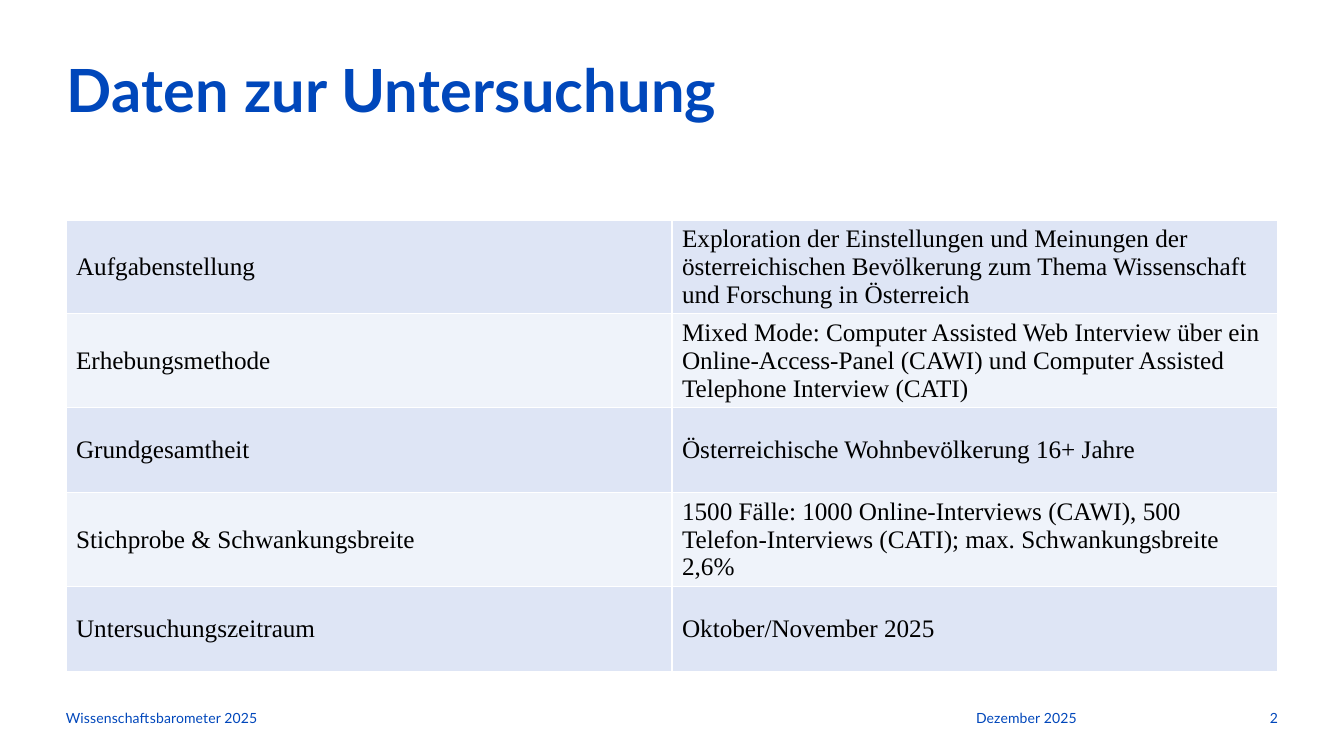
from lxml.etree import SubElement
from pptx import Presentation
from pptx.dml.color import RGBColor
from pptx.enum.text import MSO_ANCHOR as Anchor, MSO_AUTO_SIZE as AutoSize, PP_ALIGN as Align
from pptx.oxml import parse_xml
from pptx.oxml.ns import nsdecls, qn
from pptx.util import Emu, Pt

PAGE_WIDTH, PAGE_HEIGHT = 1344, 756
SCALE = 12192000 / PAGE_WIDTH
BLUE = RGBColor(0x00, 0x47, 0xBB)
BLACK = RGBColor(0x00, 0x00, 0x00)
WHITE = RGBColor(0xFF, 0xFF, 0xFF)
BANDS = RGBColor(0xDE, 0xE5, 0xF5), RGBColor(0xEF, 0xF3, 0xFA)

TITLE_FORMAT = {"name": "Lato", "size": Pt(42.5), "bold": True}
FOOTER_FORMAT = {"name": "Lato", "size": Pt(10)}
CELL_FORMAT = {"name": "Times New Roman", "size": Pt(18)}
FRAME_FORMAT = {
    "margin_left": 0, "margin_top": 0, "margin_right": 0, "margin_bottom": 0,
    "word_wrap": True, "auto_size": AutoSize.NONE, "vertical_anchor": Anchor.TOP,
}

STUDY_ROWS = [
    ("Aufgabenstellung",
     "Exploration der Einstellungen und Meinungen der österreichischen Bevölkerung "
     "zum Thema Wissenschaft und Forschung in Österreich"),
    ("Erhebungsmethode",
     "Mixed Mode: Computer Assisted Web Interview über ein Online-Access-Panel (CAWI) "
     "und Computer Assisted Telephone Interview (CATI)"),
    ("Grundgesamtheit", "Österreichische Wohnbevölkerung 16+ Jahre"),
    ("Stichprobe & Schwankungsbreite",
     "1500 Fälle: 1000 Online-Interviews (CAWI), 500 Telefon-Interviews (CATI); "
     "max. Schwankungsbreite 2,6%"),
    ("Untersuchungszeitraum", "Oktober/November 2025"),
]


def px(length):
    return Emu(round(length * SCALE))


def apply(target, values):
    for name, value in values.items():
        setattr(target, name, value)


def write(frame, text, font_format, color, align=Align.LEFT, spacing=0):
    para = frame.paragraphs[0]
    para.alignment = align
    span = para.add_run()
    span.text = text
    apply(span.font, font_format)
    span.font.color.rgb = color
    if spacing:
        span.font._element.set("spc", str(spacing))
    return para


def add_title(page, box, text):
    title = page.shapes.title
    apply(title, dict(zip(("left", "top", "width", "height"), map(px, box))))
    apply(title.text_frame, FRAME_FORMAT)
    para = write(title.text_frame, text, TITLE_FORMAT, BLUE, spacing=20)
    para.line_spacing = 0.93


def add_footer(page, box):
    left, top, width, height = box
    parts = [
        (0, 454, "Wissenschaftsbarometer 2025", Align.LEFT),
        (910, 158, "Dezember 2025", Align.LEFT),
        (width - 80, 80, "2", Align.RIGHT),
    ]
    for offset, part_width, text, align in parts:
        part = page.shapes.add_textbox(px(left + offset), px(top), px(part_width), px(height))
        apply(part.text_frame, FRAME_FORMAT)
        write(part.text_frame, text, FOOTER_FORMAT, BLUE, align, 10)


def add_borders(cell):
    properties = cell._tc.get_or_add_tcPr()
    for position, side in enumerate(("lnL", "lnR", "lnT", "lnB")):
        line = parse_xml(f'<a:{side} {nsdecls("a")} w="{Pt(1)}"/>')
        fill = SubElement(line, qn("a:solidFill"))
        SubElement(fill, qn("a:srgbClr"), val=str(WHITE))
        properties.insert(position, line)


def add_study_table(page, box, rows):
    left, top, width, row_height = box
    frame = page.shapes.add_table(
        len(rows), 2, px(left), px(top), px(width), px(row_height * len(rows)))
    table = frame.table
    apply(table, {"first_row": False, "horz_banding": False})
    for column in table.columns:
        column.width = px(width / 2)
    for index, texts in enumerate(rows):
        table.rows[index].height = px(row_height)
        for cell, text in zip(table.rows[index].cells, texts):
            cell.vertical_anchor = Anchor.MIDDLE
            cell.fill.solid()
            cell.fill.fore_color.rgb = BANDS[index % 2]
            add_borders(cell)
            write(cell.text_frame, text, CELL_FORMAT, BLACK)


def main():
    deck = Presentation()
    apply(deck, {"slide_width": px(PAGE_WIDTH), "slide_height": px(PAGE_HEIGHT)})
    page = deck.slides.add_slide(deck.slide_layouts[5])
    add_title(page, (67, 59, 1032, 139), "Daten zur Untersuchung")
    add_study_table(page, (66, 220, 1212, 85), STUDY_ROWS)
    add_footer(page, (66, 710, 1212, 20))
    deck.save("out.pptx")


if __name__ == "__main__":
    main()
